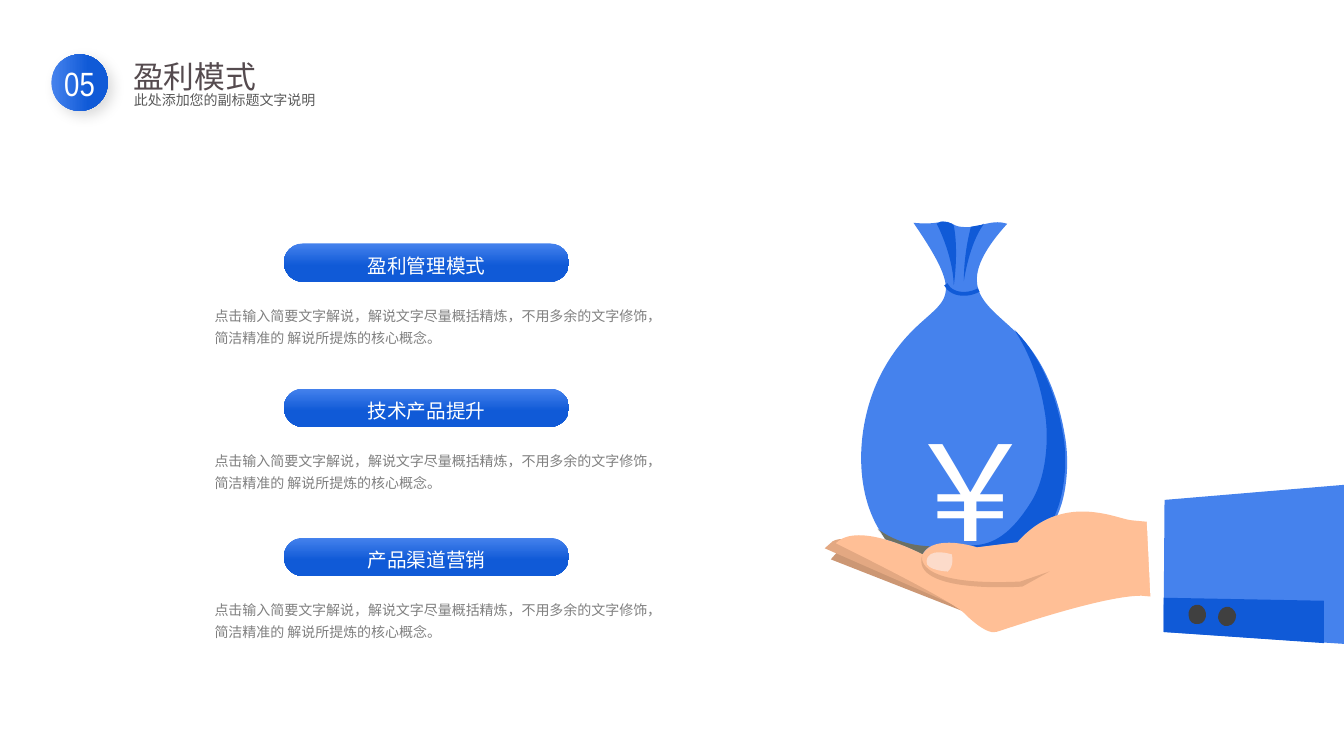
from lxml import etree
from pptx import Presentation
from pptx import util as u
from pptx.dml.color import RGBColor
from pptx.enum import shapes, text
from pptx.oxml.ns import qn

SKY = RGBColor(0x45, 0x82, 0xED)
BLUE = RGBColor(0x10, 0x5A, 0xD7)
WHITE = RGBColor(0xFF, 0xFF, 0xFF)
TITLE_GREY = RGBColor(0x55, 0x4B, 0x4F)
DARK_GREY = RGBColor(0x59, 0x59, 0x59)
MID_GREY = RGBColor(0x80, 0x80, 0x80)
PALE_GREY = RGBColor(0xE5, 0xE5, 0xE5)
MOSS = RGBColor(0x6C, 0x70, 0x63)
BUTTON = RGBColor(0x40, 0x40, 0x40)
SKIN = RGBColor(0xFF, 0xBF, 0x96)
SKIN_SHADE = RGBColor(0xE3, 0xA8, 0x82)
SKIN_DEEP = RGBColor(0xCC, 0x97, 0x74)
NAIL = RGBColor(0xFC, 0xDB, 0xCA)

CJK = "Noto Sans CJK SC"

# Outlines in hundredths of an inch: a start point, then lines (x, y)
# and cubic curves (x1, y1, x2, y2, x, y)
BAG = [
    (SKY, [(106, 21), (174, 120, 120, 87, 76, 167), (50, 214, 45, 283, 73, 327),
           (102, 374, 146, 367, 187, 365), (211, 364, 228, 346, 244, 320),
           (259, 297, 261, 257, 256, 231), (249, 190, 233, 153, 206, 128),
           (177, 100, 143, 84, 199, 22), (190, 19, 182, 21, 174, 23),
           (167, 25, 160, 26, 153, 25), (144, 24, 144, 19, 134, 20),
           (125, 22, 115, 22, 106, 21)]),
    (BLUE, [(206, 127), (221, 150, 231, 177, 236, 207), (241, 233, 238, 272, 224, 296),
            (208, 322, 191, 340, 166, 341), (163, 341), (169, 343), (209, 338),
            (221, 324, 234, 316, 246, 312), (257, 288, 259, 253, 254, 229),
            (247, 189, 231, 152, 206, 127)]),
    (PALE_GREY, [(70, 324), (71, 326), (78, 335), (73, 327), (71, 325)]),
    (MOSS, [(71, 325), (73, 327), (78, 335), (98, 341, 115, 350, 115, 350),
            (117, 346, 119, 344, 122, 342), (104, 341, 87, 337, 71, 325)]),
    (BLUE, [(136, 20), (133, 20), (129, 22), (129, 22, 145, 52, 146, 83),
            (146, 83, 151, 50, 146, 24), (144, 22), (142, 21, 139, 20, 136, 20)]),
    (BLUE, [(176, 22), (174, 23), (163, 25), (163, 26, 156, 49, 156, 79),
            (156, 79, 161, 42, 176, 22)]),
]
HAND = [
    (SKIN_DEEP, [(32, 346), (24, 355), (172, 413), (191, 389),
                 (191, 389, 63, 326, 32, 346)]),
    (SKIN_SHADE, [(26, 337), (18, 344), (164, 408), (184, 384),
                  (184, 384, 51, 322, 26, 337)]),
    (SKIN, [(437, 325), (437, 325, 336, 318, 321, 316), (306, 314, 253, 288, 209, 338),
            (169, 343), (169, 343, 126, 329, 115, 350), (115, 350, 51, 316, 29, 339),
            (29, 339, 143, 395, 156, 408), (156, 408, 177, 430, 188, 427),
            (198, 424, 293, 391, 332, 391), (448, 401)]),
    (SKIN_SHADE, [(115, 350), (115, 350, 101, 382, 212, 377), (241, 367), (214, 382),
                  (214, 382, 101, 390, 115, 350)]),
    (NAIL, [(144, 350), (144, 350, 147, 361, 140, 367), (140, 367, 118, 366, 119, 357),
            (120, 342, 144, 350, 144, 350)]),
]
SLEEVE = [
    (WHITE, [(337, 309), (342, 412), (508, 418), (505, 295)]),
    (SKY, [(355, 296), (354, 427), (536, 439), (533, 281)]),
    (BLUE, [(354, 393), (354, 427), (513, 438), (513, 396)]),
    (BUTTON, [(396, 408), (397, 414, 393, 419, 389, 419), (384, 420, 379, 417, 379, 411),
              (378, 406, 381, 401, 386, 400), (391, 399, 395, 403, 396, 408)]),
    (BUTTON, [(426, 410), (426, 416, 423, 420, 418, 421), (413, 422, 409, 418, 408, 413),
              (408, 408, 411, 403, 416, 402), (420, 401, 425, 405, 426, 410)]),
]


def style(para, size, color, font=CJK, align=text.PP_ALIGN.LEFT, spacing=1.3):
    para.alignment = align
    para.line_spacing = spacing
    para.font.size = u.Pt(size)
    para.font.color.rgb = color
    para.font.name = font
    etree.SubElement(para.font._rPr, qn("a:ea"), typeface=font)


def add_text(parent, left, top, width, height, words, size, color,
             wrap=True, fit=text.MSO_AUTO_SIZE.SHAPE_TO_FIT_TEXT, **options):
    box = parent.shapes.add_textbox(*map(u.Inches, (left, top, width, height)))
    box.text_frame.word_wrap = wrap
    box.text_frame.auto_size = fit
    para = box.text_frame.paragraphs[0]
    para.text = words
    style(para, size, color, **options)


def add_gradient_shape(parent, kind, left, top, width, height, start, stop):
    shape = parent.shapes.add_shape(kind, *map(u.Inches, (left, top, width, height)))
    shape.shadow.inherit = False
    shape.line.fill.background()
    shape.fill.gradient()
    shape.fill.gradient_angle = 0
    for mark, color, position in zip(shape.fill.gradient_stops, (SKY, BLUE), (start, stop)):
        mark.color.rgb = color
        mark.position = position
    return shape


def add_outline(parent, left, top, color, outline):
    # Lay every point as a line, then join the points of each curve
    places = [(u.Inches(left + part[i] / 100), u.Inches(top + part[i + 1] / 100))
              for part in outline for i in range(0, len(part), 2)]
    builder = parent.shapes.build_freeform(*places[0])
    builder.add_line_segments(places[1:], close=True)
    shape = builder.convert_to_shape()
    lines = iter(list(shape._element.iter(qn("a:lnTo"))))
    for part in outline[1:]:
        first = next(lines)
        if len(part) == 6:
            first.tag = qn("a:cubicBezTo")
            for extra in (next(lines), next(lines)):
                first.append(extra[0])
                extra.getparent().remove(extra)
    shape.shadow.inherit = False
    shape.fill.solid()
    shape.fill.fore_color.rgb = color
    shape.line.fill.background()


def header(page, left, top):
    # Numbered badge with a soft shadow
    badge = add_gradient_shape(page, shapes.MSO_SHAPE.OVAL, left, top, 0.56, 0.56, 0.01, 0.66)
    badge.text_frame.word_wrap = False
    badge.text_frame.vertical_anchor = text.MSO_ANCHOR.MIDDLE
    para = badge.text_frame.paragraphs[0]
    para.text = "05"
    style(para, 24, WHITE, "Arial Narrow", text.PP_ALIGN.CENTER, 1.0)
    effects = badge._element.spPr.find(qn("a:effectLst"))
    shadow = etree.SubElement(effects, qn("a:outerShdw"), blurRad=str(u.Pt(10)),
                              dist=str(u.Pt(5)), dir="2700000", algn="tl", rotWithShape="0")
    tint = etree.SubElement(shadow, qn("a:srgbClr"), val="000000")
    etree.SubElement(tint, qn("a:alpha"), val="15000")

    # Title and subtitle
    title = page.shapes.title
    title.left, title.top = u.Inches(left + 0.71), u.Inches(top - 0.13)
    title.width, title.height = u.Inches(1.44), u.Inches(0.58)
    frame = title.text_frame
    frame.text = "盈利模式"
    frame.word_wrap = False
    frame.auto_size = text.MSO_AUTO_SIZE.SHAPE_TO_FIT_TEXT
    frame.vertical_anchor = text.MSO_ANCHOR.TOP
    style(frame.paragraphs[0], 22, TITLE_GREY)
    frame.paragraphs[0].space_before = u.Pt(0)
    add_text(page, left + 0.72, top + 0.27, 3.38, 0.32, "此处添加您的副标题文字说明", 10, DARK_GREY)


def point(page, left, top, heading):
    # Pill turned on its side, with its heading
    label = page.shapes.add_group_shape()
    pill = add_gradient_shape(label, shapes.MSO_SHAPE.ROUND_2_SAME_RECTANGLE,
                              left + 2.01, top - 1.21, 0.38, 2.83, 0, 0.58)
    pill.rotation = 90
    pill.adjustments[0] = pill.adjustments[1] = 0.5
    add_text(label, left + 1.51, top, 1.38, 0.41, heading, 14, WHITE,
             wrap=False, align=text.PP_ALIGN.CENTER)
    # Explanation
    add_text(page, left, top + 0.55, 4.7, 0.54,
             "点击输入简要文字解说，解说文字尽量概括精炼，不用多余的文字修饰，"
             "简洁精准的 解说所提炼的核心概念。", 10, MID_GREY)


def money_bag(page, left, top):
    drawing = page.shapes.add_group_shape()
    for color, outline in BAG + HAND + SLEEVE:
        add_outline(drawing, left, top, color, outline)
    # String round the neck of the bag
    string = drawing.shapes.add_shape(shapes.MSO_SHAPE.ARC, u.Inches(left + 1.35),
                                      u.Inches(top + 0.5), u.Inches(0.53), u.Inches(0.4))
    string.rotation = 152.8
    string.shadow.inherit = False
    string.fill.background()
    string.line.color.rgb = BLUE
    string.line.width = u.Pt(2.75)
    # Currency sign
    add_text(page, left + 0.1, top + 1.51, 3.06, 1.24, "￥", 96, WHITE,
             fit=text.MSO_AUTO_SIZE.NONE, align=text.PP_ALIGN.CENTER)


def main():
    deck = Presentation()
    deck.slide_width, deck.slide_height = u.Inches(13.33), u.Inches(7.5)
    page = deck.slides.add_slide(deck.slide_layouts[5])
    money_bag(page, 8, 2)
    for top, heading in ((2.4, "盈利管理模式"), (3.84, "技术产品提升"), (5.32, "产品渠道营销")):
        point(page, 2.03, top, heading)
    header(page, 0.51, 0.54)
    deck.save("out.pptx")


if __name__ == "__main__":
    main()
